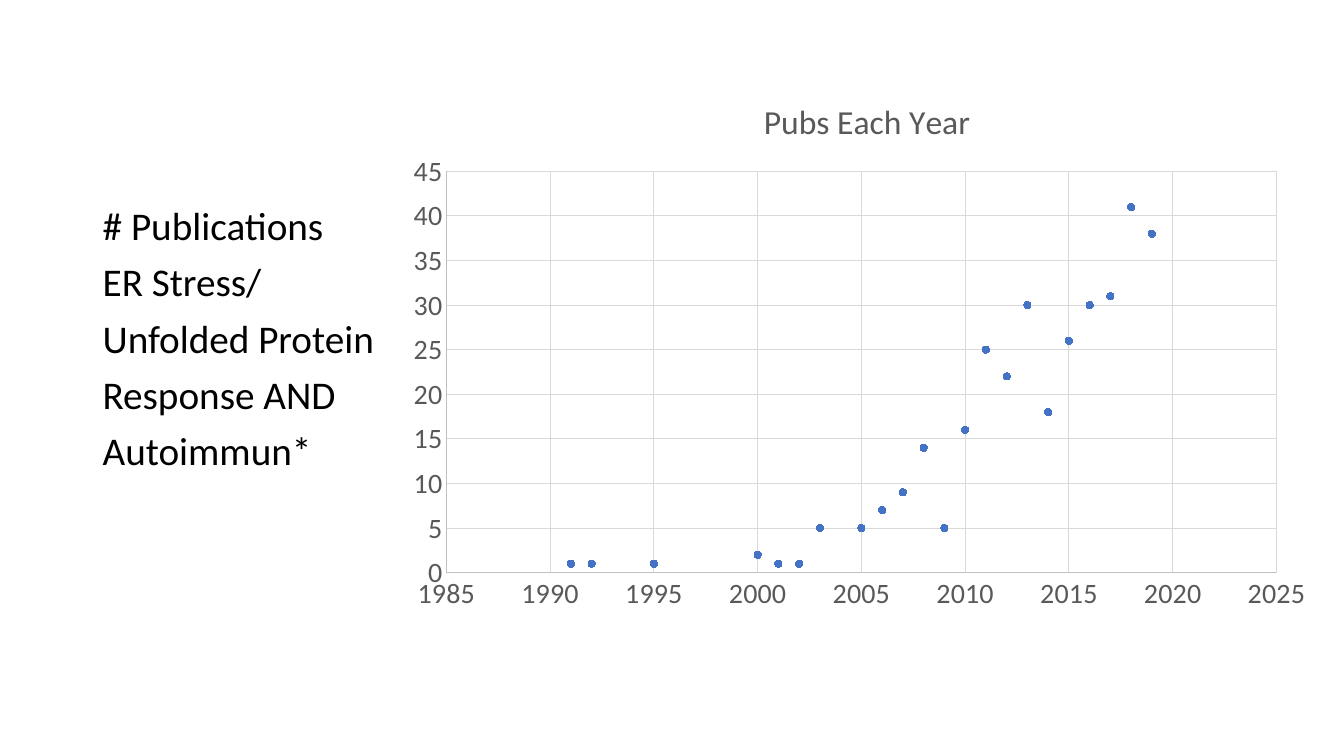
"""Build a slide with a scatter chart of publications per year."""
from lxml.etree import SubElement
from pptx import Presentation
from pptx.chart.data import XyChartData
from pptx.dml.color import RGBColor
from pptx.enum.chart import XL_CHART_TYPE as ChartType
from pptx.enum.chart import XL_MARKER_STYLE as Marker
from pptx.enum.chart import XL_TICK_MARK as Tick
from pptx.oxml.ns import qn
from pptx.util import Inches, Pt

BLACK = RGBColor(0x00, 0x00, 0x00)
LABEL_GRAY = RGBColor(0x59, 0x59, 0x59)
AXIS_GRAY = RGBColor(0xBF, 0xBF, 0xBF)
GRID_GRAY = RGBColor(0xD9, 0xD9, 0xD9)
DOT_BLUE = RGBColor(0x44, 0x72, 0xC4)
FONT = "Calibri"
TOPIC = ["# Publications", "ER Stress/", "Unfolded Protein", "Response AND", "Autoimmun*"]
PUBLICATIONS = {
    2019: 38, 2018: 41, 2017: 31, 2016: 30, 2015: 26, 2014: 18, 2013: 30, 2012: 22,
    2011: 25, 2010: 16, 2009: 5, 2008: 14, 2007: 9, 2006: 7, 2005: 5, 2003: 5,
    2002: 1, 2001: 1, 2000: 2, 1995: 1, 1992: 1, 1991: 1,
}


def style(target, values):
    for name, value in values.items():
        setattr(target, name, value)


def place(parent, index, values):
    for old in parent.findall(qn("c:layout")):
        parent.remove(old)
    layout = SubElement(parent, qn("c:layout"))
    parent.insert(index, layout)
    manual = SubElement(layout, qn("c:manualLayout"))
    for name, value in values.items():
        SubElement(manual, qn(f"c:{name}")).set("val", str(value))


deck = Presentation()
style(deck, {"slide_width": Inches(13.33), "slide_height": Inches(7.5)})
page = deck.slides.add_slide(deck.slide_layouts[6])

box = page.shapes.add_textbox(Inches(0.92), Inches(2), Inches(11.5), Inches(4.76))
frame = box.text_frame
frame.word_wrap = True
for index, line in enumerate(TOPIC):
    para = frame.add_paragraph() if index else frame.paragraphs[0]
    style(para, {"line_spacing": 0.9, "space_before": Pt(10)})
    span = para.add_run()
    span.text = line
    style(span.font, {"name": FONT, "size": Pt(28)})
    span.font.color.rgb = BLACK

data = XyChartData()
points = data.add_series("Pubs Each Year")
for year, count in PUBLICATIONS.items():
    points.add_data_point(year, count)
chart = page.shapes.add_chart(
    ChartType.XY_SCATTER, Inches(3.92), Inches(0.65), Inches(9.22), Inches(5.53), data
).chart
style(chart, {"has_legend": False, "has_title": True})
style(chart.font, {"name": FONT, "size": Pt(20)})
chart.plots[0].vary_by_categories = False

title = chart.chart_title
title.text_frame.text = "Pubs Each Year"
heading = title.text_frame.paragraphs[0].runs[0].font
style(heading, {"name": FONT, "size": Pt(24), "bold": False})
heading.color.rgb = LABEL_GRAY
place(title.format.line and chart.element.find(".//" + qn("c:title")), 1,
      {"xMode": "edge", "yMode": "edge", "x": 0.39, "y": 0.05})
place(chart.element.find(".//" + qn("c:plotArea")), 0,
      {"layoutTarget": "inner", "xMode": "edge", "yMode": "edge",
       "x": 0.055, "y": 0.19, "w": 0.893, "h": 0.72})

for axis, low, high in ((chart.category_axis, 1985, 2025), (chart.value_axis, 0, 45)):
    style(axis, {
        "minimum_scale": low, "maximum_scale": high, "major_unit": 5,
        "major_tick_mark": Tick.NONE, "minor_tick_mark": Tick.NONE,
        "has_major_gridlines": True,
    })
    style(axis.tick_labels.font, {"name": FONT, "size": Pt(20)})
    axis.tick_labels.font.color.rgb = LABEL_GRAY
    for line, color in ((axis.format.line, AXIS_GRAY),
                        (axis.major_gridlines.format.line, GRID_GRAY)):
        line.color.rgb = color
        line.width = Pt(0.75)

series = chart.plots[0].series[0]
series.format.line.fill.background()
style(series.marker, {"style": Marker.CIRCLE, "size": 5})
series.marker.format.fill.solid()
series.marker.format.fill.fore_color.rgb = DOT_BLUE
series.marker.format.line.color.rgb = DOT_BLUE

deck.save("out.pptx")
